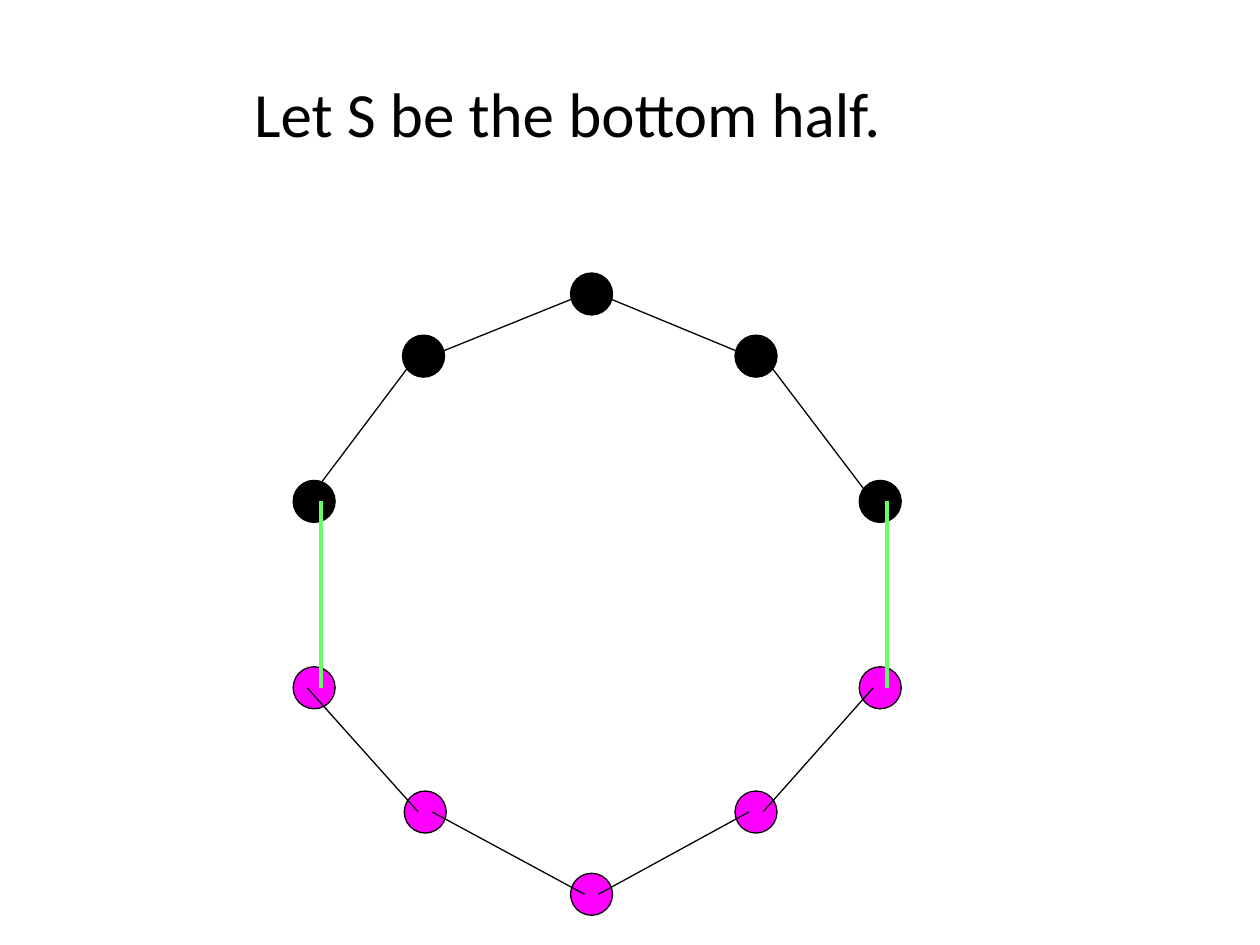
from lxml.etree import SubElement
from pptx import Presentation
from pptx.dml.color import RGBColor
from pptx.enum.shapes import MSO_CONNECTOR, MSO_SHAPE
from pptx.enum.text import MSO_ANCHOR, PP_ALIGN
from pptx.oxml.ns import qn
from pptx.util import Pt

COLORS = {"upper": "000000", "lower": "FF00FF", "edge": "000000", "cut": "66FF66", "text": "000000"}
NODE_SIZE = 24
END_SHIFT = 4

NODES = {
    "top": (170.5, 12, "upper"),
    "bottom": (170.5, 355, "lower"),
    "upper right": (335.5, 130.5, "upper"),
    "lower right": (335.5, 237, "lower"),
    "upper left": (12, 130.5, "upper"),
    "lower left": (12, 237, "lower"),
    "top left": (74.5, 47.5, "upper"),
    "top right": (264.5, 47.5, "upper"),
    "bottom left": (75.5, 308, "lower"),
    "bottom right": (264.5, 308, "lower"),
}

EDGES = [
    ("bottom", 1, "bottom right", -1),
    ("top left", 1, "top", -1),
    ("bottom right", 1, "lower right", -1),
    ("upper right", -1, "top right", 1),
    ("top right", -1, "top", 1),
    ("top left", -1, "upper left", -1),
    ("upper left", 1, "lower left", 1),
    ("lower left", -1, "bottom left", -1),
    ("bottom left", 1, "bottom", -1),
    ("lower right", 1, "upper right", 1),
]


def rgb(name):
    """Return the named colour."""
    return RGBColor.from_string(COLORS[name])


def add_heading(slide, left, top, width, height):
    """Place the title in the given box."""
    heading = slide.shapes.title
    heading.left, heading.top, heading.width, heading.height = map(Pt, (left, top, width, height))
    frame = heading.text_frame
    frame.text = "Let S be the bottom half."
    frame.word_wrap = False
    frame.vertical_anchor = MSO_ANCHOR.TOP
    statement = frame.paragraphs[0]
    statement.alignment = PP_ALIGN.LEFT
    statement.font.name = "Calibri"
    statement.font.size = Pt(36)
    statement.font.color.rgb = rgb("text")


def add_cycle(slide, left, top):
    """Draw the ten-node cycle, marking the edges between its halves."""
    cycle = slide.shapes.add_group_shape().shapes
    for x, y, half in NODES.values():
        node = cycle.add_shape(
            MSO_SHAPE.OVAL,
            Pt(left + x - NODE_SIZE / 2),
            Pt(top + y - NODE_SIZE / 2),
            Pt(NODE_SIZE),
            Pt(NODE_SIZE),
        )
        node.shadow.inherit = False
        node.fill.solid()
        node.fill.fore_color.rgb = rgb(half)
        node.line.color.rgb = rgb("edge")
        node.line.width = Pt(0.75)
    for start, start_side, end, end_side in EDGES:
        x1, y1, start_half = NODES[start]
        x2, y2, end_half = NODES[end]
        crosses = start_half != end_half
        edge = cycle.add_connector(
            MSO_CONNECTOR.STRAIGHT,
            Pt(left + x1 + start_side * END_SHIFT),
            Pt(top + y1),
            Pt(left + x2 + end_side * END_SHIFT),
            Pt(top + y2),
        )
        edge.line.color.rgb = rgb("cut" if crosses else "edge")
        edge.line.width = Pt(2.5 if crosses else 0.75)
        SubElement(edge._element.spPr, qn("a:effectLst"))


def main():
    """Build and save the slide."""
    deck = Presentation()
    deck.slide_width, deck.slide_height = Pt(720), Pt(540)
    slide = deck.slides.add_slide(deck.slide_layouts[5])
    add_cycle(slide, 167.5, 156)
    add_heading(slide, 138, 39, 378, 51)
    deck.save("out.pptx")


if __name__ == "__main__":
    main()
